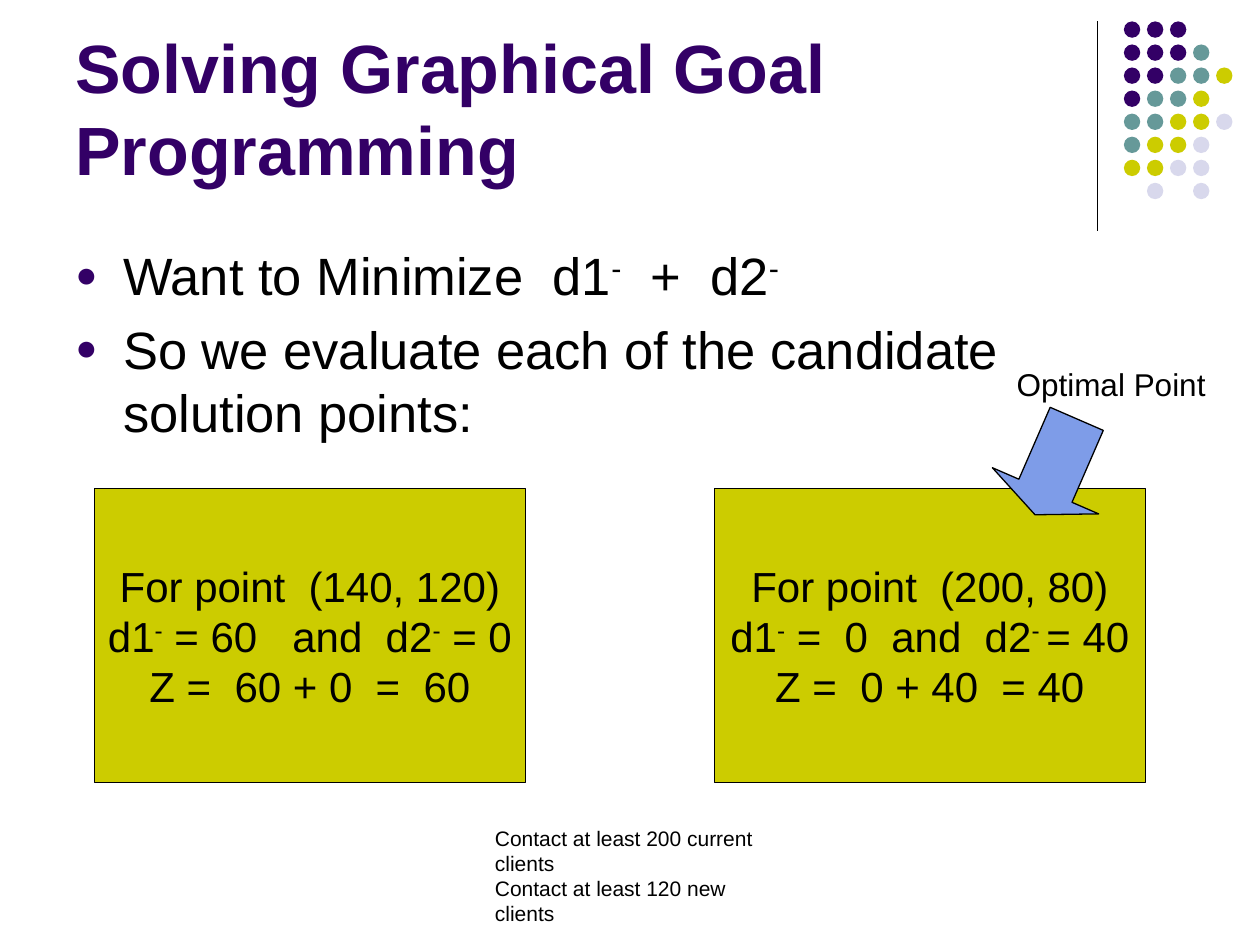
from dataclasses import dataclass

import pptx
import pptx.dml.color
import pptx.enum.shapes
import pptx.enum.text
import pptx.oxml
import pptx.oxml.ns
import pptx.util
from pptx.util import Inches

SHAPE = pptx.enum.shapes.MSO_SHAPE
ALIGN = pptx.enum.text.PP_ALIGN
ANCHOR = pptx.enum.text.MSO_ANCHOR


@dataclass(frozen=True)
class Theme:
    font: str = "Arial"
    purple: str = "330066"
    teal: str = "669999"
    olive: str = "CCCC00"
    lavender: str = "D8D8EC"
    blue: str = "7E9CE8"
    black: str = "000000"
    title_size: int = 39
    body_size: int = 30
    result_size: int = 24
    label_size: int = 18
    note_size: int = 12
    line_width: float = 0.75


THEME = Theme()

# One row of dots per string; a space leaves the place empty.
DOT_ROWS = ["PPP", "PPPT", "PPTTO", "PTTO", "TTOOL", "TOOL", "OOLL", " L L"]
DOT_COLORS = {"P": THEME.purple, "T": THEME.teal,
              "O": THEME.olive, "L": THEME.lavender}

# In these lines every second piece, split at "^", is a superscript.
GOAL_LINES = ["Want to Minimize  d1^-^  +  d2^-",
              "So we evaluate each of the candidate solution points:"]
CANDIDATES = [
    (0.75, ["For point  (140, 120)",
            "d1^-^ = 60   and  d2^-^ = 0",
            "Z =  60 + 0  =  60"]),
    (5.67, ["For point  (200, 80)",
            "d1^-^ =  0  and  d2^- ^= 40",
            "Z =  0 + 40  = 40"]),
]
CLIENT_GOALS = ["Contact at least 200 current clients",
                "Contact at least 120 new clients"]


def rgb(value):
    return pptx.dml.color.RGBColor.from_string(value)


def write_lines(frame, lines, size, color=THEME.black, bold=False, align=ALIGN.LEFT):
    """Write one paragraph per line, raising the pieces between carets."""
    for number, line in enumerate(lines):
        paragraph = frame.paragraphs[0] if number == 0 else frame.add_paragraph()
        paragraph.alignment = align
        for position, piece in enumerate(line.split("^")):
            run = paragraph.add_run()
            run.text = piece
            run.font.name = THEME.font
            run.font.size = pptx.util.Pt(size)
            run.font.bold = bold
            run.font.color.rgb = rgb(color)
            if position % 2:
                run.font._element.set("baseline", "30000")


def add_text(slide, box, lines, size, wrap=True, anchor=ANCHOR.TOP, **style):
    frame = slide.shapes.add_textbox(*map(Inches, box)).text_frame
    frame.word_wrap = wrap
    frame.vertical_anchor = anchor
    write_lines(frame, lines, size, **style)
    return frame


def indent(paragraph, left, first=0):
    properties = paragraph._p.get_or_add_pPr()
    properties.set("marL", str(Inches(left)))
    properties.set("indent", str(Inches(first)))
    return properties


def add_bullet(paragraph):
    properties = indent(paragraph, 0.38, -0.38)
    paragraph.space_before = pptx.util.Pt(THEME.body_size * 0.2)
    namespace = pptx.oxml.ns.nsdecls("a")
    for markup in (
        f'<a:buClr {namespace}><a:srgbClr val="{THEME.purple}"/></a:buClr>',
        f'<a:buSzPct {namespace} val="70000"/>',
        f'<a:buFont {namespace} typeface="{THEME.font}"/>',
        f'<a:buChar {namespace} char="●"/>',
    ):
        properties.append(pptx.oxml.parse_xml(markup))


def add_filled_shape(slide, kind, box, fill, outlined=True):
    shape = slide.shapes.add_shape(kind, *map(Inches, box))
    shape.shadow.inherit = False
    shape.fill.solid()
    shape.fill.fore_color.rgb = rgb(fill)
    if outlined:
        shape.line.color.rgb = rgb(THEME.black)
        shape.line.width = pptx.util.Pt(THEME.line_width)
    else:
        shape.line.fill.background()
    return shape


def add_divider(slide):
    divider = slide.shapes.add_connector(
        pptx.enum.shapes.MSO_CONNECTOR.STRAIGHT,
        Inches(8.71), Inches(0.17), Inches(8.71), Inches(1.83))
    divider.line.color.rgb = rgb(THEME.black)
    divider.line.width = pptx.util.Pt(THEME.line_width)
    divider._element.spPr.append(pptx.oxml.parse_xml(
        f'<a:effectLst {pptx.oxml.ns.nsdecls("a")}/>'))


def add_dot_pattern(slide):
    left, top, pitch, diameter = 8.92, 0.17, 0.183, 0.13
    for row, dots in enumerate(DOT_ROWS):
        for column, dot in enumerate(dots):
            if dot in DOT_COLORS:
                box = (left + column * pitch, top + row * pitch, diameter, diameter)
                add_filled_shape(slide, SHAPE.OVAL, box, DOT_COLORS[dot], outlined=False)


def add_candidate(slide, left, lines):
    card = add_filled_shape(slide, SHAPE.RECTANGLE, (left, 3.88, 3.42, 2.33), THEME.olive)
    card.text_frame.word_wrap = False
    card.text_frame.vertical_anchor = ANCHOR.MIDDLE
    write_lines(card.text_frame, lines, THEME.result_size, align=ALIGN.CENTER)


def main():
    deck = pptx.Presentation()
    deck.slide_width, deck.slide_height = Inches(10), Inches(7.5)
    slide = deck.slides.add_slide(deck.slide_layouts[6])

    add_divider(slide)
    add_dot_pattern(slide)
    add_text(slide, (0.5, 0.13, 8.25, 1.42), ["Solving Graphical Goal Programming"],
             THEME.title_size, anchor=ANCHOR.BOTTOM, color=THEME.purple, bold=True)

    goal = add_text(slide, (0.5, 1.88, 9, 4.82), GOAL_LINES, THEME.body_size)
    for paragraph in goal.paragraphs:
        add_bullet(paragraph)

    for left, lines in CANDIDATES:
        add_candidate(slide, left, lines)

    optimal_arrow = add_filled_shape(
        slide, SHAPE.DOWN_ARROW, (7.92, 3.29, 0.92, 0.83), THEME.blue)
    optimal_arrow.adjustments[0] = 0.5
    optimal_arrow.adjustments[1] = 0.25
    optimal_arrow.rotation = 23.5
    add_text(slide, (7.97, 2.85, 1.7, 0.4), ["Optimal Point"],
             THEME.label_size, wrap=False)

    client_goals = add_text(slide, (3.33, 6.5, 2.83, 0.5), CLIENT_GOALS, THEME.note_size)
    for paragraph in client_goals.paragraphs:
        paragraph.level = 1
        indent(paragraph, 0.5)

    deck.save("out.pptx")


if __name__ == "__main__":
    main()
